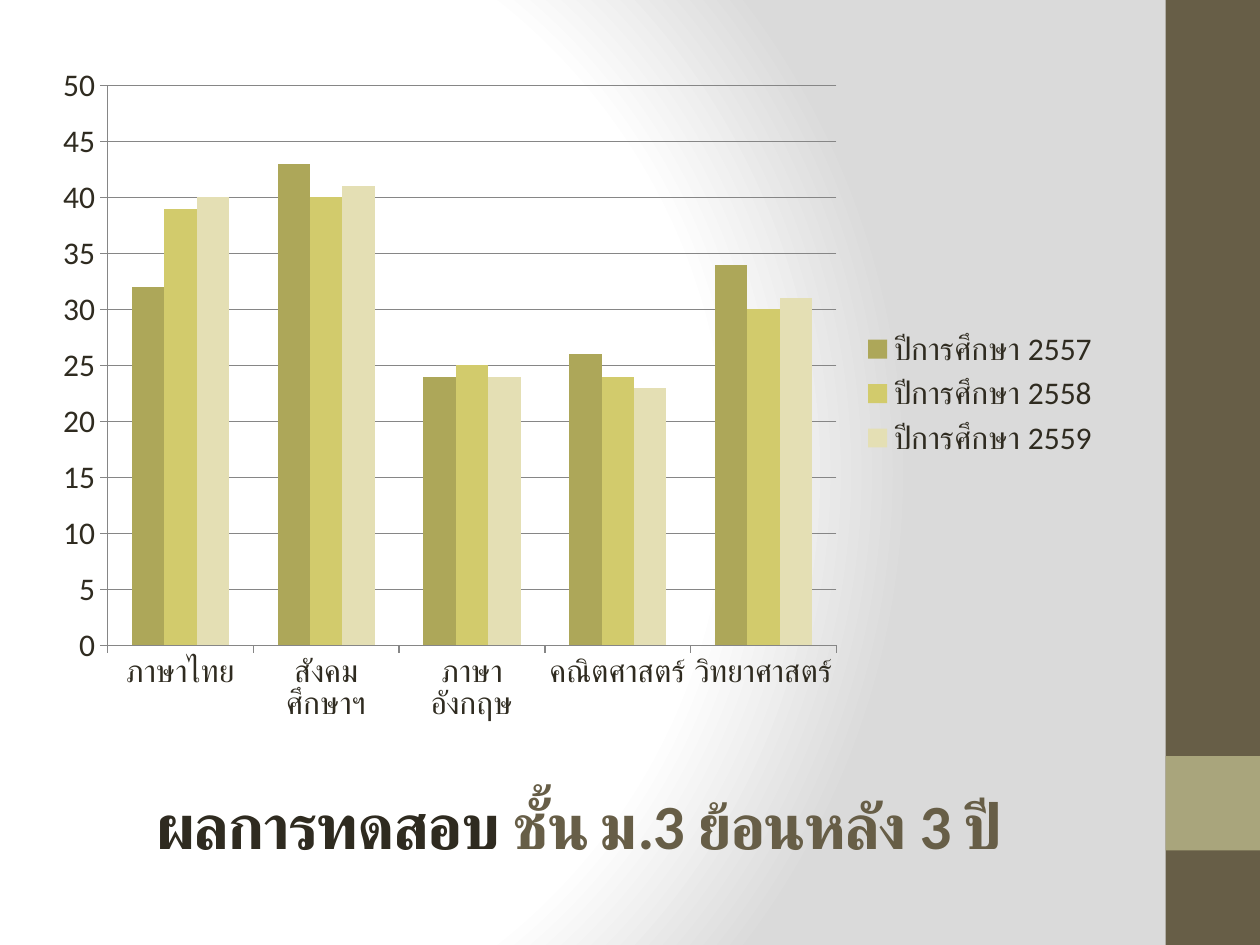
"""Build a slide with a clustered column chart of test results over three years."""
from lxml import etree
from pptx import Presentation
from pptx import util as u
from pptx.chart import data
from pptx.dml.color import RGBColor
from pptx.enum import chart as ch
from pptx.enum import shapes, text
from pptx.oxml import parse_xml
from pptx.oxml.ns import qn

Pt = u.Pt
FONT = "Calibri"
INK = RGBColor(0x2F, 0x2B, 0x20)
BROWN = RGBColor(0x67, 0x5E, 0x47)
SAGE = RGBColor(0xA9, 0xA5, 0x7C)
GREY = RGBColor(0x86, 0x86, 0x86)
OLIVE = RGBColor(0xAD, 0xA7, 0x59)
YELLOW = RGBColor(0xD2, 0xCB, 0x6C)
CREAM = RGBColor(0xE4, 0xDF, 0xB4)

BACKDROP = """
<a:gradFill xmlns:a="http://schemas.openxmlformats.org/drawingml/2006/main" rotWithShape="1">
  <a:gsLst>
    <a:gs pos="0"><a:srgbClr val="FFFFFF"/></a:gs>
    <a:gs pos="75000"><a:srgbClr val="FFFFFF"/></a:gs>
    <a:gs pos="100000"><a:srgbClr val="DADADA"/></a:gs>
  </a:gsLst>
  <a:path path="circle"><a:fillToRect l="20000" t="50000" r="100000" b="50000"/></a:path>
</a:gradFill>"""


def add_run(p, words, size=36, color=INK, bold=True, spacing=-1):
    r = p.add_run()
    r.text = words
    r.font.name = FONT
    r.font.size = Pt(size)
    r.font.bold = bold
    r.font.color.rgb = color
    rPr = r.font._element
    rPr.set("spc", str(spacing * 100))
    etree.SubElement(rPr, qn("a:cs")).set("typeface", FONT)


prs = Presentation()
prs.slide_width, prs.slide_height = Pt(720), Pt(540)
s = prs.slides.add_slide(prs.slide_layouts[6])

s.background.fill.solid()
solid = s.element.find(".//" + qn("p:bgPr")).find(qn("a:solidFill"))
solid.getparent().replace(solid, parse_xml(BACKDROP))

for top, height, color in [(0, 540, BROWN), (432, 54, SAGE)]:
    sp = s.shapes.add_shape(shapes.MSO_SHAPE.RECTANGLE, Pt(666), Pt(top), Pt(54), Pt(height))
    sp.shadow.inherit = False
    sp.fill.solid()
    sp.fill.fore_color.rgb = color
    sp.line.fill.background()

title = s.shapes.add_textbox(Pt(25.2), Pt(473.8), Pt(612), Pt(46.8))
tf = title.text_frame
tf.word_wrap = True
tf.vertical_anchor = text.MSO_ANCHOR.BOTTOM
tf.margin_bottom = Pt(28)
p = tf.paragraphs[0]
p.alignment = text.PP_ALIGN.CENTER
add_run(p, "ผลการทดสอบ ")
add_run(p, "ชั้น ม.3 ย้อนหลัง 3 ปี", color=BROWN)

years = [
    ("ปีการศึกษา 2557", [32, 43, 24, 26, 34], OLIVE),
    ("ปีการศึกษา 2558", [39, 40, 25, 24, 30], YELLOW),
    ("ปีการศึกษา 2559", [40, 41, 24, 23, 31], CREAM),
]
scores = data.CategoryChartData()
scores.categories = ["ภาษาไทย", "สังคมศึกษาฯ", "ภาษาอังกฤษ", "คณิตศาสตร์", "วิทยาศาสตร์"]
for name, values, color in years:
    scores.add_series(name, values)

chart = s.shapes.add_chart(ch.XL_CHART_TYPE.COLUMN_CLUSTERED,
                           Pt(23.8), Pt(30.2), Pt(612), Pt(389.5), scores).chart
chart.has_title = False
chart.font.name = FONT
chart.font.size = Pt(18)
chart.font.color.rgb = INK
chart.has_legend = True
chart.legend.position = ch.XL_LEGEND_POSITION.RIGHT
chart.legend.include_in_layout = False

plot = chart.plots[0]
plot.gap_width = 150
plot.overlap = 0
plot.vary_by_categories = False
for series, (name, values, color) in zip(plot.series, years):
    series.format.fill.solid()
    series.format.fill.fore_color.rgb = color

axis = chart.value_axis
axis.minimum_scale, axis.maximum_scale, axis.major_unit = 0, 50, 5
axis.has_major_gridlines = True
for ax in (axis, chart.category_axis):
    ax.major_tick_mark = ch.XL_TICK_MARK.OUTSIDE
for line in (axis.format.line, axis.major_gridlines.format.line, chart.category_axis.format.line):
    line.color.rgb = GREY
    line.width = Pt(0.75)

prs.save("out.pptx")
